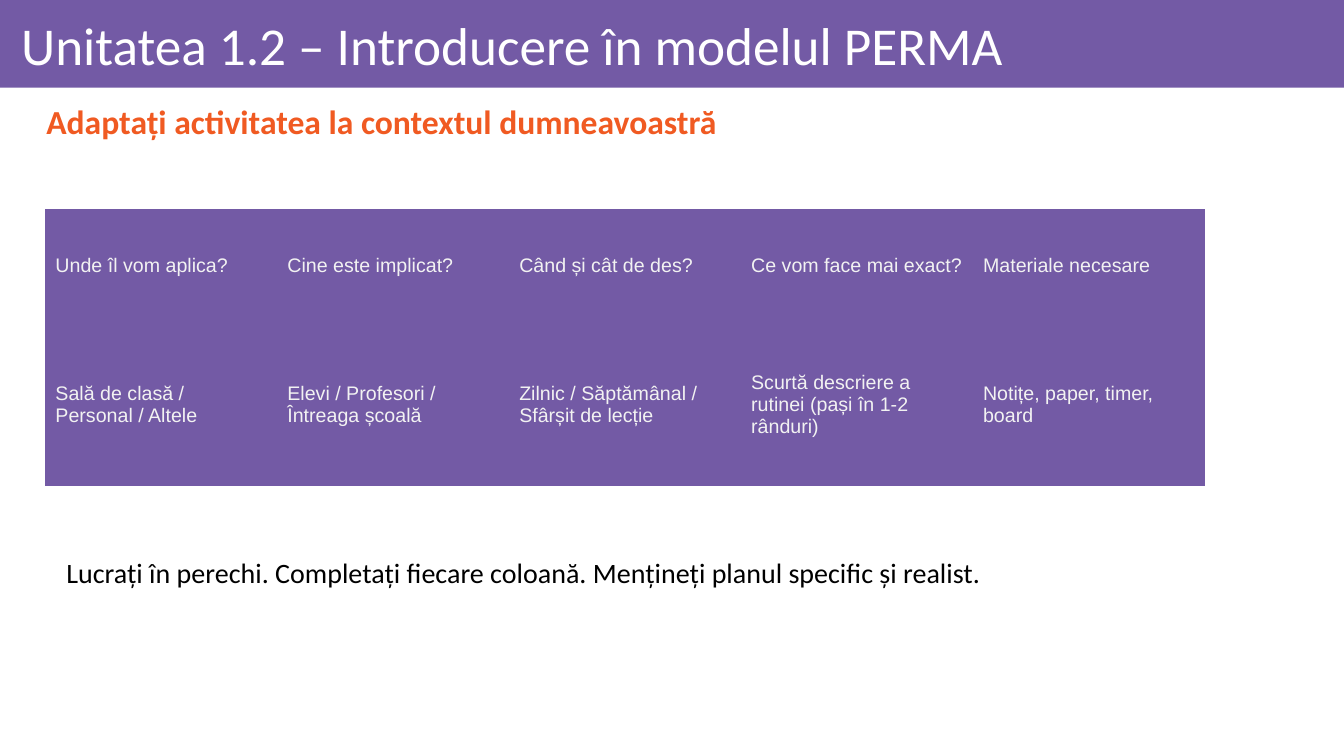
"""Builds a slide that plans a PERMA activity in a five-column table."""
import pptx
import pptx.dml.color
import pptx.enum.shapes
import pptx.enum.text
import pptx.util

Inches = pptx.util.Inches
MIDDLE = pptx.enum.text.MSO_ANCHOR.MIDDLE
TOP = pptx.enum.text.MSO_ANCHOR.TOP
LEFT = pptx.enum.text.PP_ALIGN.LEFT
COLORS = {"purple": "735AA5", "orange": "F05A22", "white": "FFFFFF",
          "pale": "F2F2F2", "black": "000000"}
PLAIN = "{2D5ABB26-0587-4C30-8999-92F81FD0307C}"
ROWS = [
    ["Unde îl vom aplica?", "Cine este implicat?", "Când și cât de des?",
     "Ce vom face mai exact?", "Materiale necesare"],
    ["Sală de clasă / Personal / Altele",
     "Elevi / Profesori / Întreaga școală",
     "Zilnic / Săptămânal / Sfârșit de lecție",
     "Scurtă descriere a rutinei (pași în 1-2 rânduri)",
     "Notițe, paper, timer, board"],
]


def color(name):
    return pptx.dml.color.RGBColor.from_string(COLORS[name])


def paint(item, name):
    item.fill.solid()
    item.fill.fore_color.rgb = color(name)


def write(frame, text, size, ink, font="Calibri", bold=False, spacing=1.0):
    para = frame.paragraphs[0]
    para.alignment = LEFT
    para.line_spacing = spacing
    run = para.add_run()
    run.text = text
    run.font.size = pptx.util.Pt(size)
    run.font.name = font
    run.font.bold = bold
    run.font.color.rgb = color(ink)


def place(shape, box):
    shape.left, shape.top, shape.width, shape.height = map(Inches, box)


def inset(frame, left, top, right, bottom, anchor=MIDDLE):
    frame.margin_left, frame.margin_top = Inches(left), Inches(top)
    frame.margin_right, frame.margin_bottom = Inches(right), Inches(bottom)
    frame.vertical_anchor = anchor
    frame.word_wrap = True


def add_band(slide, box):
    rect = pptx.enum.shapes.MSO_SHAPE.RECTANGLE
    band = slide.shapes.add_shape(rect, *map(Inches, box))
    band.shadow.inherit = False
    paint(band, "purple")
    band.line.fill.background()
    slide.shapes._spTree.insert(2, band._element)


def set_title(slide, text, box):
    title = slide.shapes.title
    place(title, box)
    inset(title.text_frame, 0.1, 0.06, 0.06, 0.06)
    write(title.text_frame, text, 38, "white", spacing=0.9)


def add_text(slide, text, box, left=0.1, anchor=TOP, **style):
    frame = slide.shapes.add_textbox(*map(Inches, box)).text_frame
    inset(frame, left, 0.05, 0.1, 0.05, anchor)
    write(frame, text, **style)


def add_grid(slide, rows, box, heights):
    frame = slide.shapes.add_table(len(rows), len(rows[0]), *map(Inches, box))
    table = frame.table
    table._tbl.tblPr[0].text = PLAIN
    for row, height, texts in zip(table.rows, heights, rows):
        row.height = Inches(height)
        for cell, text in zip(row.cells, texts):
            paint(cell, "purple")
            cell.vertical_anchor = MIDDLE
            write(cell.text_frame, text, 14, "pale", font="Arial")


def main():
    deck = pptx.Presentation()
    deck.slide_width, deck.slide_height = Inches(13.33), Inches(7.5)
    slide = deck.slides.add_slide(deck.slide_layouts[5])
    add_band(slide, (0, 0, 13.33, 0.87))
    set_title(slide, "Unitatea 1.2 – Introducere în modelul PERMA",
              (0.11, 0.09, 13.06, 0.78))
    add_text(slide, "Adaptați activitatea la contextul dumneavoastră",
             (0.11, 0.93, 13.06, 0.6), left=0.35, anchor=MIDDLE,
             size=24, ink="orange", bold=True, spacing=0.9)
    add_grid(slide, ROWS, (0.45, 2.07, 11.5, 2.75), (1.14, 1.61))
    add_text(slide, "Lucrați în perechi. Completați fiecare coloană. "
             "Mențineți planul specific și realist.",
             (0.56, 5.46, 10.54, 0.44), size=20, ink="black")
    deck.save("out.pptx")


if __name__ == "__main__":
    main()
